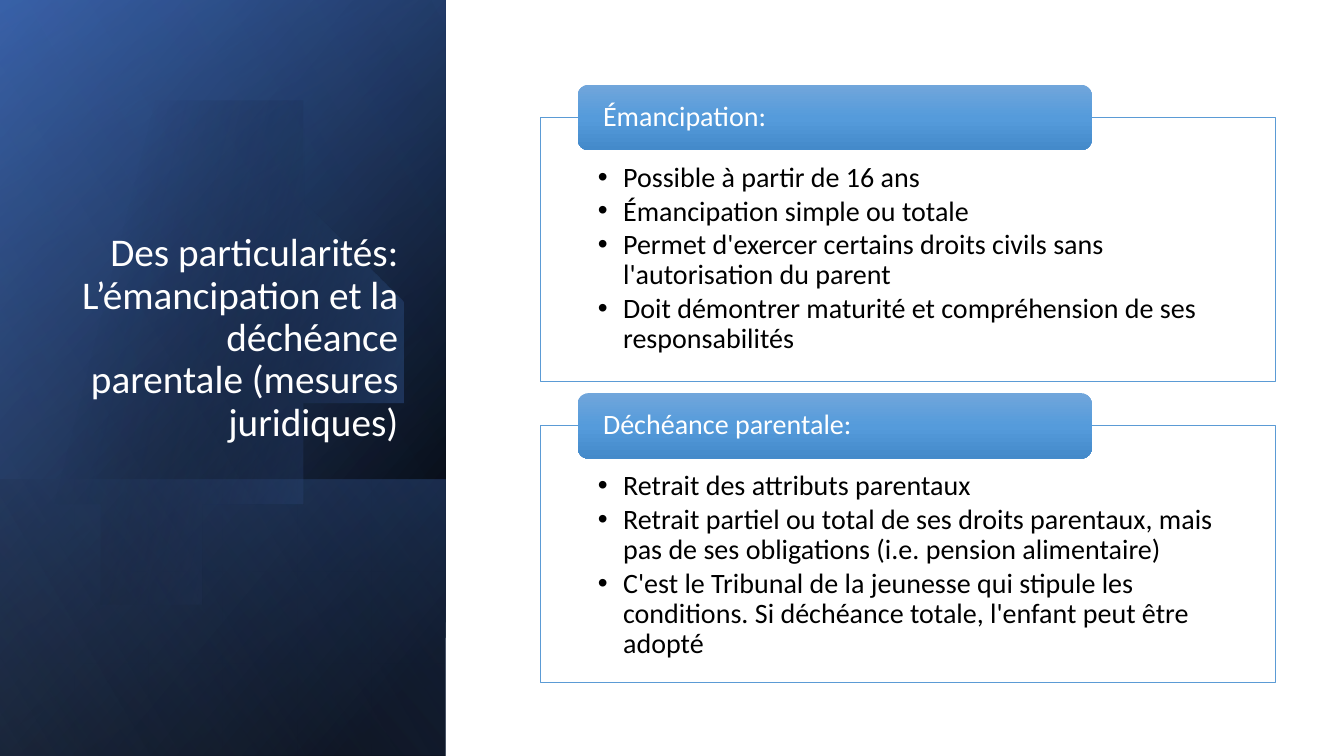
from dataclasses import dataclass

from pptx import Presentation
from pptx.dml.color import RGBColor
from pptx.enum.shapes import MSO_SHAPE
from pptx.enum.text import MSO_ANCHOR, MSO_AUTO_SIZE, PP_ALIGN
from pptx.oxml import parse_xml
from pptx.oxml.ns import nsdecls, qn
from pptx.util import Inches, Pt

WHITE = RGBColor(0xFF, 0xFF, 0xFF)
BLACK = RGBColor(0x00, 0x00, 0x00)
NAVY = RGBColor(0x2F, 0x55, 0x97)
BLUE = RGBColor(0x44, 0x72, 0xC4)
PALE_BLUE = RGBColor(0x8F, 0xAA, 0xDC)
FRAME_BLUE = RGBColor(0x5B, 0x9B, 0xD5)
HEADER_TOP = RGBColor(0x71, 0xA6, 0xDB)
HEADER_MIDDLE = RGBColor(0x55, 0x9B, 0xDB)
HEADER_BOTTOM = RGBColor(0x44, 0x8A, 0xCA)

FONT = "Calibri"
PANEL_WIDTH = 4.42
PAGE_HEIGHT = 7.5


@dataclass
class Stop:
    position: int
    color: RGBColor
    opacity: int = 100


@dataclass
class Shade:
    top: float
    angle: int
    stops: list[Stop]


@dataclass
class Section:
    header: str
    top: float
    height: float
    points: list[str]


BACK_SHADES = [
    Shade(0, 50, [Stop(8, BLACK), Stop(100, NAVY)]),
    Shade(0, 30, [Stop(0, BLACK, 0), Stop(99, BLUE, 46)]),
    Shade(4.76, 130, [Stop(2, BLUE, 29), Stop(100, BLACK, 30)]),
]
FRONT_SHADE = Shade(0, 120, [Stop(0, BLACK, 0), Stop(99, PALE_BLUE, 11)])
DISC_STOPS = [Stop(29, BLACK, 0), Stop(100, BLUE, 43)]
HEADER_STOPS = [Stop(0, HEADER_TOP), Stop(50, HEADER_MIDDLE), Stop(100, HEADER_BOTTOM)]

DISC_START = (1.49, 1.1)
DISC_CURVES = [
    [(2.46, 1.12), (3.35, 1.77), (3.63, 2.75)],
    [(3.98, 3.97), (3.28, 5.23), (2.07, 5.58)],
    [(1.31, 5.8), (0.53, 5.61), (-0.03, 5.14)],
    [(-0.15, 5.03)],
    [(-0.15, 1.75)],
    [(0, 1.61)],
    [(0.23, 1.42), (0.5, 1.28), (0.8, 1.19)],
    [(1.03, 1.13), (1.26, 1.1), (1.49, 1.1)],
]

SECTIONS = [
    Section("Émancipation:", 1.16, 2.62, [
        "Possible à partir de 16 ans",
        "Émancipation simple ou totale",
        "Permet d'exercer certains droits civils sans l'autorisation du parent",
        "Doit démontrer maturité et compréhension de ses responsabilités",
    ]),
    Section("Déchéance parentale:", 4.22, 2.55, [
        "Retrait des attributs parentaux",
        "Retrait partiel ou total de ses droits parentaux, mais pas de ses obligations "
        "(i.e. pension alimentaire)",
        "C'est le Tribunal de la jeunesse qui stipule les conditions. Si déchéance totale, "
        "l'enfant peut être adopté",
    ]),
]


def apply(target, values: dict) -> None:
    for name, value in values.items():
        setattr(target, name, value)


def add_box(page, kind, left: float, top: float, width: float, height: float):
    box = page.shapes.add_shape(kind, Inches(left), Inches(top), Inches(width), Inches(height))
    box.shadow.inherit = False
    box.line.fill.background()
    return box


def fill_gradient(shape, angle: int, stops: list[Stop]) -> None:
    marks = "".join(
        f'<a:gs pos="{stop.position * 1000}"><a:srgbClr val="{stop.color}">'
        f'<a:alpha val="{stop.opacity * 1000}"/></a:srgbClr></a:gs>'
        for stop in stops
    )
    gradient = parse_xml(
        f'<a:gradFill {nsdecls("a")} rotWithShape="1"><a:gsLst>{marks}</a:gsLst>'
        f'<a:lin ang="{angle * 60000}" scaled="0"/></a:gradFill>'
    )
    shape.fill.gradient()
    properties = shape.element.spPr
    properties.replace(properties.find(qn("a:gradFill")), gradient)


def add_shade(page, shade: Shade) -> None:
    length = PAGE_HEIGHT - shade.top
    left = (PANEL_WIDTH - length) / 2
    top = shade.top + (length - PANEL_WIDTH) / 2
    box = add_box(page, MSO_SHAPE.RECTANGLE, left, top, length, PANEL_WIDTH)
    box.rotation = 90
    box.element.spPr.xfrm.set("flipH", "1")
    fill_gradient(box, shade.angle, shade.stops)


def curve_points(start: tuple, controls: list[tuple], steps: int = 24) -> list[tuple]:
    if len(controls) == 1:
        return controls
    anchors = [start, *controls]
    points = []
    for step in range(1, steps + 1):
        t = step / steps
        weights = [(1 - t) ** 3, 3 * t * (1 - t) ** 2, 3 * t * t * (1 - t), t ** 3]
        points.append(tuple(
            sum(weight * anchor[axis] for weight, anchor in zip(weights, anchors))
            for axis in (0, 1)
        ))
    return points


def add_disc(page) -> None:
    outline = [DISC_START]
    for controls in DISC_CURVES:
        outline += curve_points(outline[-1], controls)
    builder = page.shapes.build_freeform(*outline[0], scale=Inches(1))
    builder.add_line_segments(outline[1:], close=True)
    disc = builder.convert_to_shape()
    disc.shadow.inherit = False
    disc.line.fill.background()
    fill_gradient(disc, 14, DISC_STOPS)


def write_para(para, text: str, size: int, color: RGBColor, alignment=PP_ALIGN.LEFT) -> None:
    span = para.add_run()
    span.text = text
    apply(span.font, {"name": FONT, "size": Pt(size)})
    span.font.color.rgb = color
    apply(para, {"alignment": alignment, "line_spacing": 0.9, "space_before": Pt(0)})


def add_bullet(para) -> None:
    properties = para._p.get_or_add_pPr()
    properties.set("marL", str(Inches(0.25)))
    properties.set("indent", str(-Inches(0.25)))
    properties.append(parse_xml(f'<a:buFont {nsdecls("a")} typeface="Arial"/>'))
    properties.append(parse_xml(f'<a:buChar {nsdecls("a")} char="•"/>'))


def add_section(page, section: Section) -> None:
    box = add_box(page, MSO_SHAPE.RECTANGLE, 5.36, section.top, 7.29, section.height)
    box.fill.solid()
    box.fill.fore_color.rgb = WHITE
    color = box.element.spPr.find(qn("a:solidFill")).find(qn("a:srgbClr"))
    color.append(parse_xml(f'<a:alpha {nsdecls("a")} val="90000"/>'))
    box.line.color.rgb = FRAME_BLUE
    box.line.width = Pt(0.5)
    frame = box.text_frame
    apply(frame, {
        "word_wrap": True, "vertical_anchor": MSO_ANCHOR.TOP,
        "margin_left": Inches(0.57), "margin_right": Inches(0.57),
        "margin_top": Inches(0.46), "margin_bottom": Inches(0.16),
    })
    for index, point in enumerate(section.points):
        para = frame.add_paragraph() if index else frame.paragraphs[0]
        write_para(para, point, 20, BLACK)
        para.space_after = Pt(2.4)
        add_bullet(para)

    header = add_box(page, MSO_SHAPE.ROUNDED_RECTANGLE, 5.73, section.top - 0.32, 5.1, 0.65)
    fill_gradient(header, 90, HEADER_STOPS)
    apply(header.text_frame, {
        "word_wrap": True, "vertical_anchor": MSO_ANCHOR.MIDDLE,
        "margin_left": Inches(0.22), "margin_right": Inches(0.22),
        "margin_top": 0, "margin_bottom": 0,
    })
    write_para(header.text_frame.paragraphs[0], section.header, 20, WHITE)


def add_title(page) -> None:
    title = page.shapes.title
    apply(title, {
        "left": Inches(0.64), "top": Inches(1.84),
        "width": Inches(3.41), "height": Inches(2.62),
    })
    apply(title.text_frame, {
        "word_wrap": True, "auto_size": MSO_AUTO_SIZE.NONE,
        "vertical_anchor": MSO_ANCHOR.BOTTOM,
    })
    text = "Des particularités: L’émancipation et la déchéance parentale (mesures juridiques)"
    write_para(title.text_frame.paragraphs[0], text, 28, WHITE, PP_ALIGN.RIGHT)
    title.element.getparent().append(title.element)


def main() -> None:
    deck = Presentation()
    apply(deck, {"slide_width": Inches(13.33), "slide_height": Inches(PAGE_HEIGHT)})
    page = deck.slides.add_slide(deck.slide_layouts[5])
    for shade in BACK_SHADES:
        add_shade(page, shade)
    add_disc(page)
    add_shade(page, FRONT_SHADE)
    add_title(page)
    for section in SECTIONS:
        add_section(page, section)
    deck.save("out.pptx")


if __name__ == "__main__":
    main()
